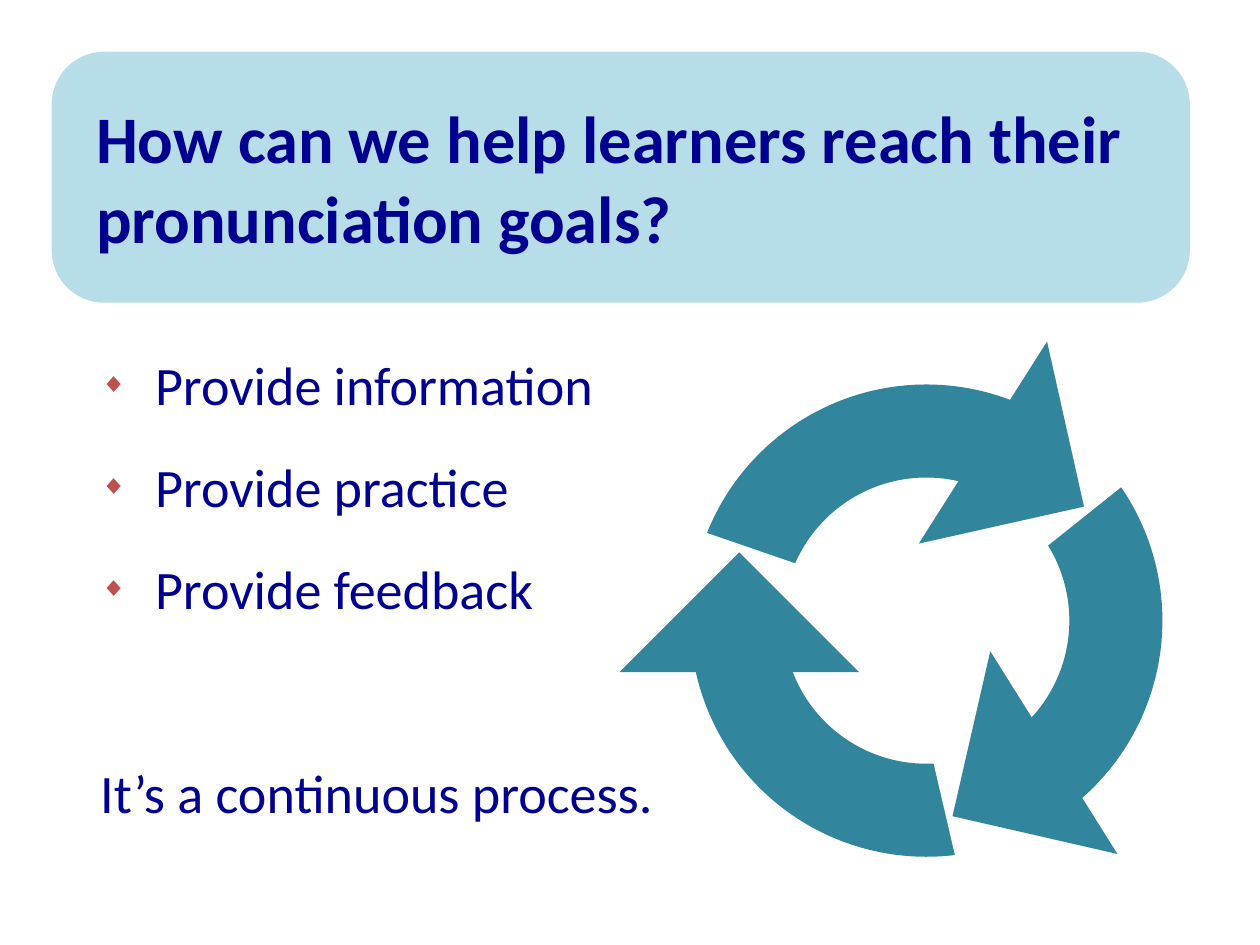
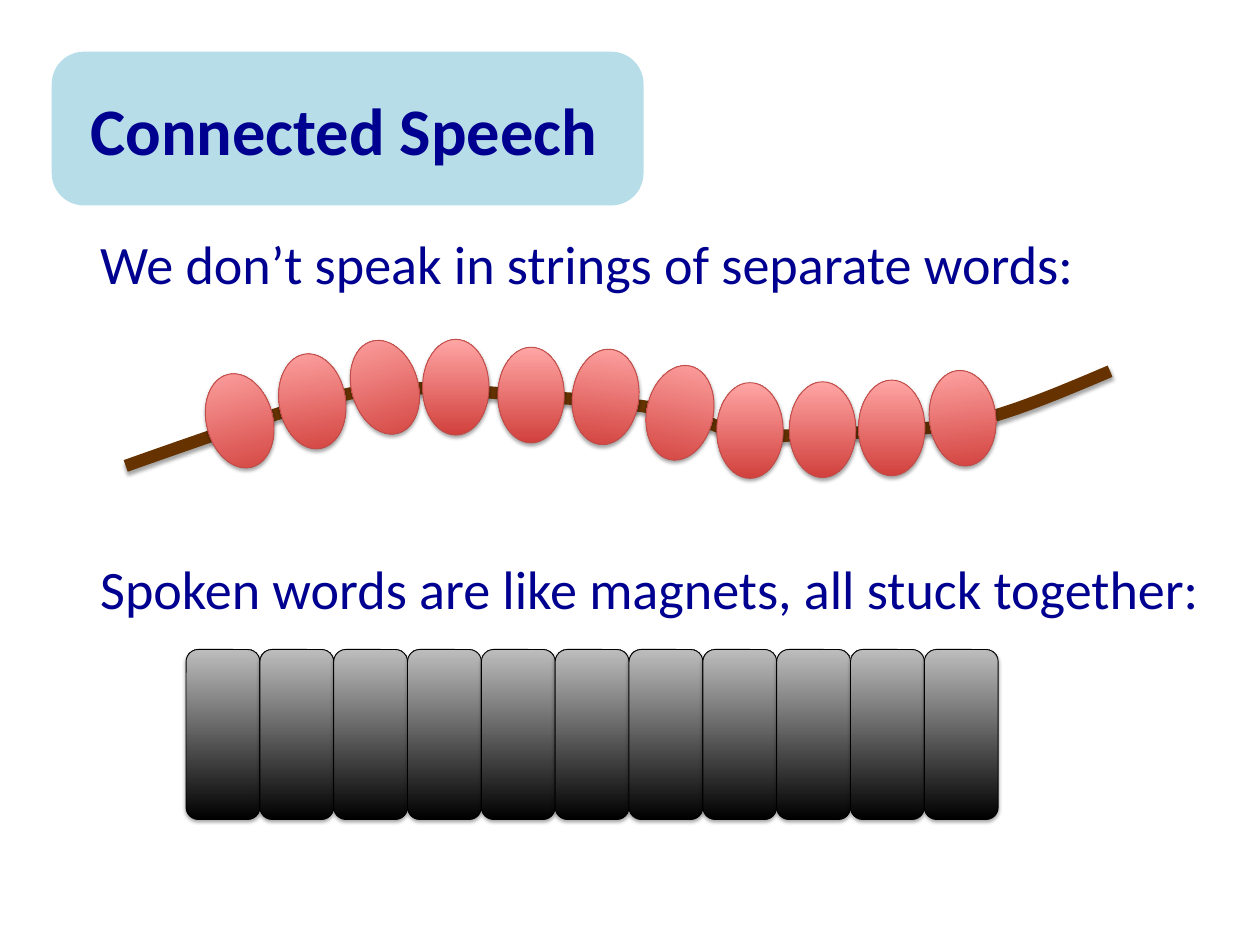
import lxml.etree
import pptx
import pptx.dml.color
import pptx.enum.shapes
import pptx.enum.text
import pptx.oxml.ns
import pptx.util

Pt = pptx.util.Pt
KIND = pptx.enum.shapes.MSO_SHAPE
ALIGN = pptx.enum.text.PP_ALIGN
ANCHOR = pptx.enum.text.MSO_ANCHOR

FONT = "Calibri"
COLORS = {
    "navy": "000090", "panel": "B7DEE8", "teal": "31859C", "white": "FFFFFF",
    "bullet": "C0504D", "string": "663300", "black": "000000", "gray": "BDBDBD",
    "red": "D1403C", "pink": "FFA6A5", "rim": "BF4C48",
}
LINE = 52.9  # height of one line of body text
ROUND = 0.21

# Start point, then three points for each curve
STRING = [
    (102.2, 378.7),
    (159.1, 358.6), (216.7, 338.4), (254.2, 327.6),
    (291.6, 317.5), (298.1, 316.1), (326.9, 315.4),
    (356.4, 314.6), (429.8, 321.8), (429.8, 321.8),
    (457.2, 324), (473, 324), (494.6, 326.9),
    (516.2, 329), (537.8, 331.9), (558, 337),
    (577.4, 341.3), (583.9, 351.4), (612.7, 353.5),
    (642.2, 355.7), (701.3, 351.4), (733, 349.2),
    (765.4, 347), (776.2, 347), (804.2, 339.1),
    (832.3, 331.2), (866.9, 316.8), (902.2, 301.7),
]
# Left, top, turn
BEADS = [
    (167.8, 303.1, -14.5), (226.8, 287.3, -9.4), (285.8, 275.8, -16.3),
    (343.4, 275.8, 0), (404.6, 282.2, 0), (465.1, 283.7, 7),
    (525.6, 296.6, 12.2), (582.5, 311, 0), (641.5, 310.3, 0),
    (697.7, 308.9, 0), (755.3, 301, -6.2),
]
# Corner of the gap, corner of the arrowhead, turn of the arrowhead
ARROWS = [
    ((779, 354.2), (730.1, 290.9), 257.4),
    ((709.2, 633.6), (787.7, 542.9), 12.9),
    ((491.8, 438.5), (532.1, 477.4), 135),
]


def color(name):
    return pptx.dml.color.RGBColor.from_string(COLORS[name])


def child(node, tag, **attrs):
    """Append a drawing element to node."""
    item = lxml.etree.SubElement(node, pptx.oxml.ns.qn("a:" + tag))
    for key, value in attrs.items():
        item.set(key, str(value))
    return item


def place(shape, left, top, width, height):
    shape.left, shape.top = Pt(left), Pt(top)
    shape.width, shape.height = Pt(width), Pt(height)


def write(para, text, size=44, bold=False, after=0, bullet=False):
    para.alignment = ALIGN.LEFT
    para.space_before, para.space_after = Pt(0), Pt(after)
    run = para.add_run()
    run.text = text
    font = run.font
    font.name, font.size, font.bold = FONT, Pt(size), bold
    font.color.rgb = color("navy")
    props = para._p.get_or_add_pPr()
    indent = Pt(44.6) if bullet else 0
    props.set("marL", str(indent))
    props.set("indent", str(-indent))
    if bullet:
        child(child(props, "buClr"), "srgbClr", val=COLORS["bullet"])
        child(props, "buSzPct", val=50000)
        child(props, "buChar", char="◆")
    else:
        child(props, "buNone")


def shade(shape):
    """Give the shape a soft shadow below it."""
    shape.shadow.inherit = False
    effects = shape._element.spPr.find(pptx.oxml.ns.qn("a:effectLst"))
    outer = child(effects, "outerShdw", blurRad=Pt(3.1), dist=Pt(1.8),
                  dir=90 * 60000, rotWithShape=0)
    child(child(outer, "srgbClr", val=COLORS["black"]), "alpha", val=35000)


def flat(shapes, kind, box, fill, turn=0):
    shape = shapes.add_shape(kind, *map(Pt, box))
    shape.rotation = turn
    shape.fill.solid()
    shape.fill.fore_color.rgb = color(fill)
    shape.line.fill.background()
    shape.shadow.inherit = False
    return shape


def glossy(shapes, kind, box, low, high, rim, turn=0):
    """Add a shape shaded from low at the bottom to high at the top."""
    shape = shapes.add_shape(kind, *map(Pt, box))
    shape.rotation = turn
    shape.fill.gradient()
    shape.fill.gradient_angle = 90
    for stop, name in zip(shape.fill.gradient_stops, (low, high)):
        stop.color.rgb = color(name)
    shape.line.color.rgb = color(rim)
    shape.line.width = Pt(0.75)
    shade(shape)


def header(slide, text, width, height):
    box = 42, 42, width, height
    panel = flat(slide.shapes, KIND.ROUNDED_RECTANGLE, box, "panel")
    panel.adjustments[0] = ROUND
    slide.shapes._spTree.insert(2, panel._element)
    title = slide.shapes.title
    place(title, *box)
    frame = title.text_frame
    frame.auto_size = pptx.enum.text.MSO_AUTO_SIZE.NONE
    frame.word_wrap = True
    frame.vertical_anchor = ANCHOR.MIDDLE
    corner = ROUND * height * 0.29
    frame.margin_left, frame.margin_right = Pt(23.7 + corner), Pt(10 + corner)
    write(frame.paragraphs[0], text, size=54, bold=True)


def body(slide, box, items):
    """Fill the body with pairs of text and format."""
    holder = slide.placeholders[1]
    place(holder, *box)
    frame = holder.text_frame
    frame.auto_size = pptx.enum.text.MSO_AUTO_SIZE.NONE
    frame.word_wrap = True
    frame.vertical_anchor = ANCHOR.TOP
    for i, (text, style) in enumerate(items):
        para = frame.add_paragraph() if i else frame.paragraphs[0]
        write(para, text, **style)


def cycle(slide):
    shapes = slide.shapes.add_group_shape().shapes
    ring = flat(shapes, KIND.DONUT, (560.9, 312.5, 383.8, 383.8), "teal")
    ring.adjustments[0] = 0.197
    for gap, head, turn in ARROWS:
        flat(shapes, KIND.RECTANGLE, (*gap, 185.8, 64.1), "white", turn + 64)
        flat(shapes, KIND.RIGHT_TRIANGLE, (*head, 137.5, 137.5), "teal", turn)


def curve(points, steps=12):
    """Yield points along joined cubic curves, after the start point."""
    for i in range(0, len(points) - 1, 3):
        knots = points[i:i + 4]
        for step in range(1, steps + 1):
            t = step / steps
            u = 1 - t
            parts = u ** 3, 3 * u * u * t, 3 * u * t * t, t ** 3
            yield tuple(Pt(sum(p * k[axis] for p, k in zip(parts, knots)))
                        for axis in (0, 1))


def beads(slide):
    shapes = slide.shapes.add_group_shape().shapes
    pen = shapes.build_freeform(*map(Pt, STRING[0]))
    pen.add_line_segments(curve(STRING), close=False)
    string = pen.convert_to_shape()
    string.fill.background()
    string.line.color.rgb = color("string")
    string.line.width = Pt(10)
    shade(string)
    for left, top, turn in BEADS:
        glossy(shapes, KIND.OVAL, (left, top, 54, 77.8),
               "red", "pink", "rim", turn)


def magnets(slide):
    shapes = slide.shapes.add_group_shape().shapes
    width = 60
    for i in range(11):
        glossy(shapes, KIND.ROUNDED_RECTANGLE,
               (151.2 + i * width, 527.8, width, 138.2),
               "black", "gray", "black")


def main():
    deck = pptx.Presentation()
    deck.slide_width, deck.slide_height = Pt(1024), Pt(768)
    layout = deck.slide_layouts[1]

    goals = deck.slides.add_slide(layout)
    header(goals, "How can we help learners reach their pronunciation goals?",
           925, 204)
    body(goals, (74.2, 282.2, 558, 395), [
        ("Provide information", {"bullet": True, "after": 30}),
        ("Provide practice", {"bullet": True, "after": 30}),
        ("Provide feedback", {"bullet": True, "after": 60 + LINE}),
        ("It’s a continuous process.", {}),
    ])
    cycle(goals)

    speech = deck.slides.add_slide(layout)
    header(speech, "Connected Speech", 481, 125)
    body(speech, (74.2, 183.6, 918, 327), [
        ("We don’t speak in strings of separate words:", {"after": 4 * LINE}),
        ("Spoken words are like magnets, all stuck together:", {}),
    ])
    beads(speech)
    magnets(speech)

    deck.save("out.pptx")


if __name__ == "__main__":
    main()
